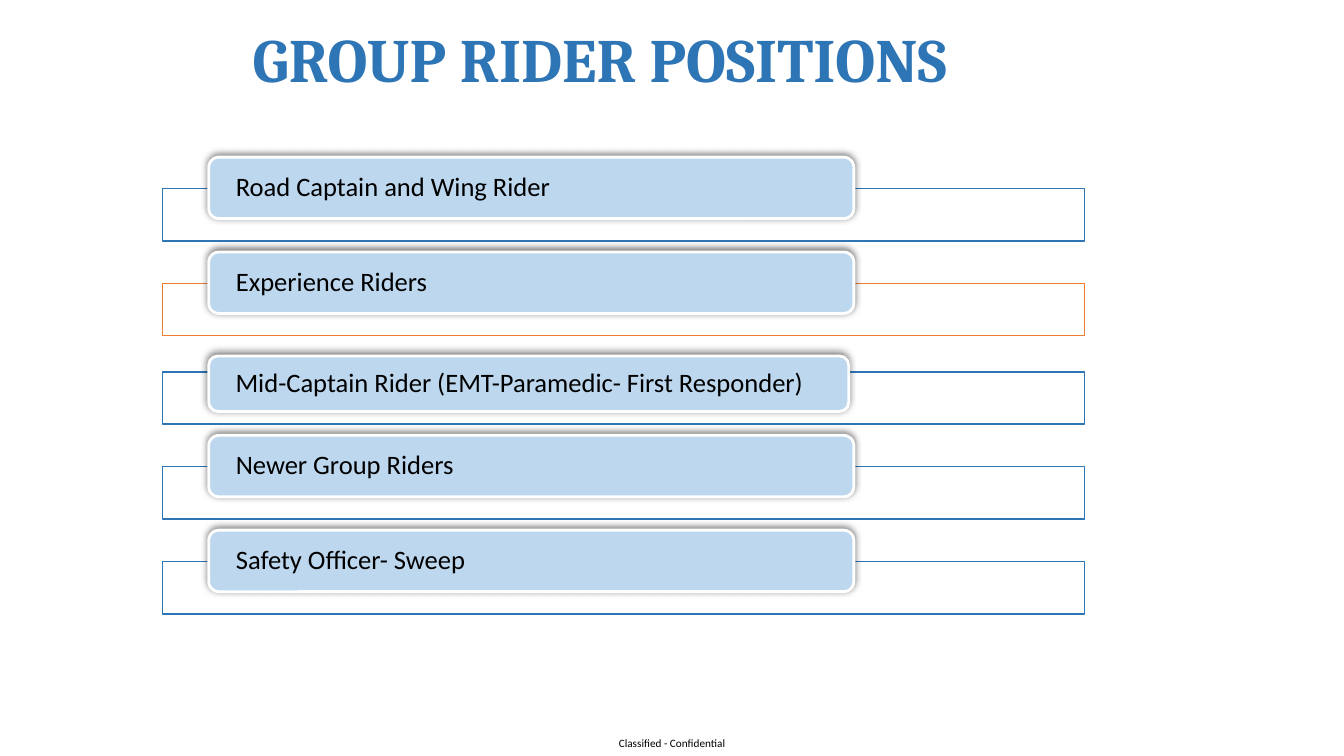
from lxml import etree
from pptx import Presentation
from pptx.dml.color import RGBColor
from pptx.enum.shapes import MSO_SHAPE
from pptx.enum.text import MSO_ANCHOR, PP_ALIGN
from pptx.util import Cm, Pt

RECTANGLE, ROUNDED = MSO_SHAPE.RECTANGLE, MSO_SHAPE.ROUNDED_RECTANGLE
MIDDLE = MSO_ANCHOR.MIDDLE
LEFT, CENTER = PP_ALIGN.LEFT, PP_ALIGN.CENTER
BLUE = RGBColor(0x2E, 0x75, 0xB6)
ORANGE = RGBColor(0xED, 0x7D, 0x31)
PALE_BLUE = RGBColor(0xBD, 0xD7, 0xEE)
WHITE = RGBColor(0xFF, 0xFF, 0xFF)
BLACK = RGBColor(0x00, 0x00, 0x00)

SHADOW = (
    '<a:effectLst xmlns:a="http://schemas.openxmlformats.org/drawingml/2006/main">'
    '<a:outerShdw blurRad="63500" dist="25400" dir="14700000" algn="t" rotWithShape="0">'
    '<a:srgbClr val="000000"><a:alpha val="50000"/></a:srgbClr>'
    '</a:outerShdw></a:effectLst>'
)


def write(shape, text, font_name, size, color, align=LEFT, inset=0, bold=False):
    frame = shape.text_frame
    frame.word_wrap = True
    frame.vertical_anchor = MIDDLE
    frame.margin_left = frame.margin_right = Cm(inset)
    frame.margin_top = frame.margin_bottom = 0
    para = frame.paragraphs[0]
    para.text = text
    para.alignment = align
    para.line_spacing = 0.9
    para.font.name = font_name
    para.font.size = Pt(size)
    para.font.bold = bold
    para.font.color.rgb = color


def add_outlined(kind, left, top, width, height, line_color, line_width):
    shape = page.shapes.add_shape(kind, Cm(left), Cm(top), Cm(width), Cm(height))
    shape.shadow.inherit = False
    shape.line.color.rgb = line_color
    shape.line.width = Pt(line_width)
    return shape


deck = Presentation()
deck.slide_width, deck.slide_height = Cm(33.87), Cm(19.05)
page = deck.slides.add_slide(deck.slide_layouts[6])

footer = page.shapes.add_textbox(Cm(15.24), Cm(18.42), Cm(3.4), Cm(0.63))
write(footer, "Classified - Confidential", "Calibri", 8, BLACK, align=CENTER)

title = page.shapes.add_textbox(Cm(6.12), Cm(-0.86), Cm(22.53), Cm(4.85))
write(title, "GROUP RIDER POSITIONS", "Cambria", 44, BLUE, inset=0.25, bold=True)

FULL_LABEL = (0.79, 16.26, 1.55)
SLIM_LABEL = (0.4, 16.13, 1.4)
ROW_PITCH = 2.39
positions = [
    ("Road Captain and Wing Rider", BLUE, FULL_LABEL, ROW_PITCH),
    ("Experience Riders", ORANGE, FULL_LABEL, 2.23),
    ("Mid-Captain Rider (EMT-Paramedic- First Responder)", BLUE, SLIM_LABEL, ROW_PITCH),
    ("Newer Group Riders", BLUE, FULL_LABEL, ROW_PITCH),
    ("Safety Officer- Sweep", BLUE, FULL_LABEL, ROW_PITCH),
]

row_top = 4.75
for name, color, (rise, width, height), pitch in positions:
    bar = add_outlined(RECTANGLE, 4.09, row_top, 23.24, 1.32, color, 1)
    bar.fill.background()

    label = add_outlined(ROUNDED, 5.26, row_top - rise, width, height, WHITE, 2)
    label.fill.solid()
    label.fill.fore_color.rgb = PALE_BLUE
    properties = label.element.spPr
    properties.replace(properties.effectLst, etree.fromstring(SHADOW))
    write(label, name, "Calibri", 19, BLACK, inset=0.61)
    row_top += pitch

deck.save("out.pptx")
